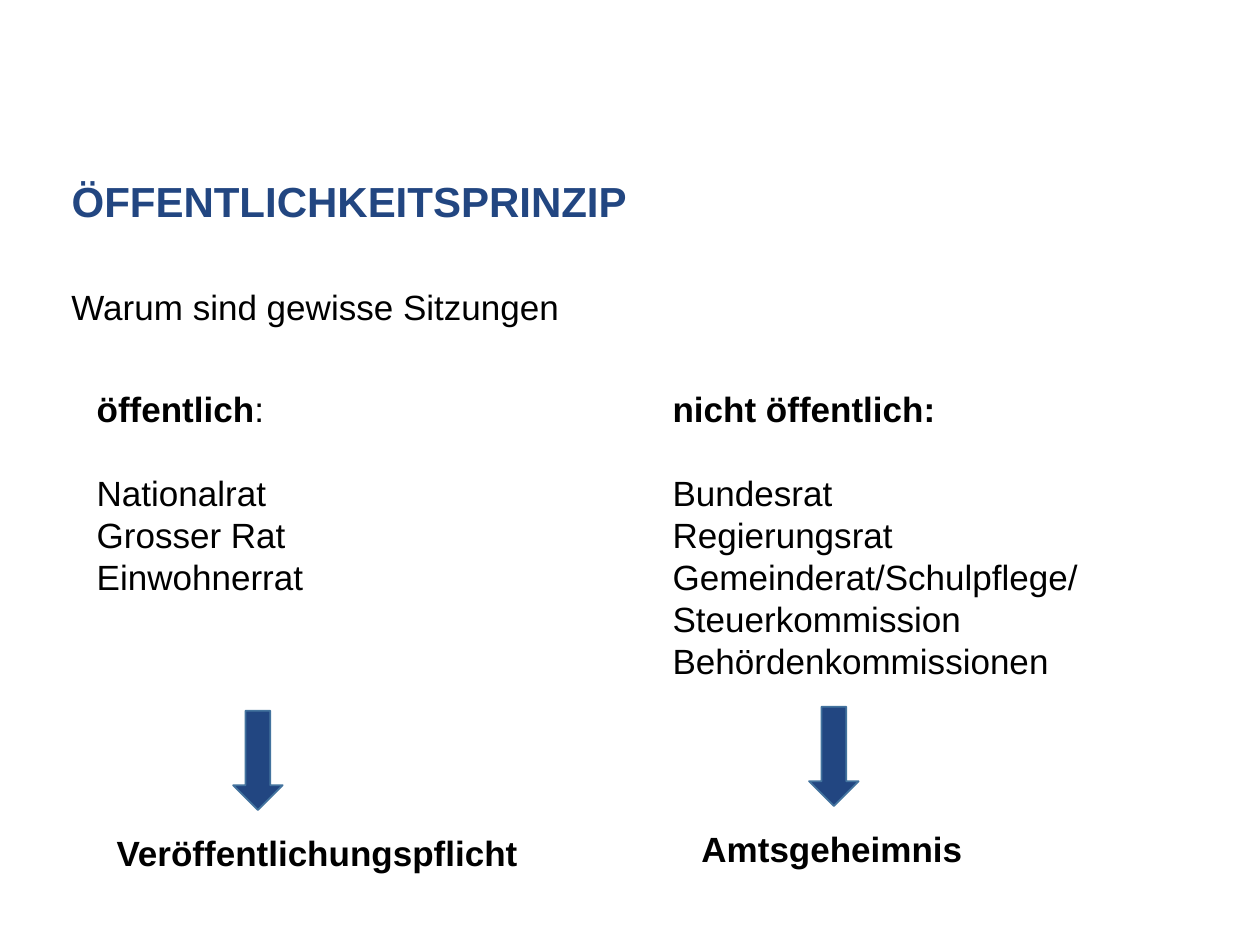
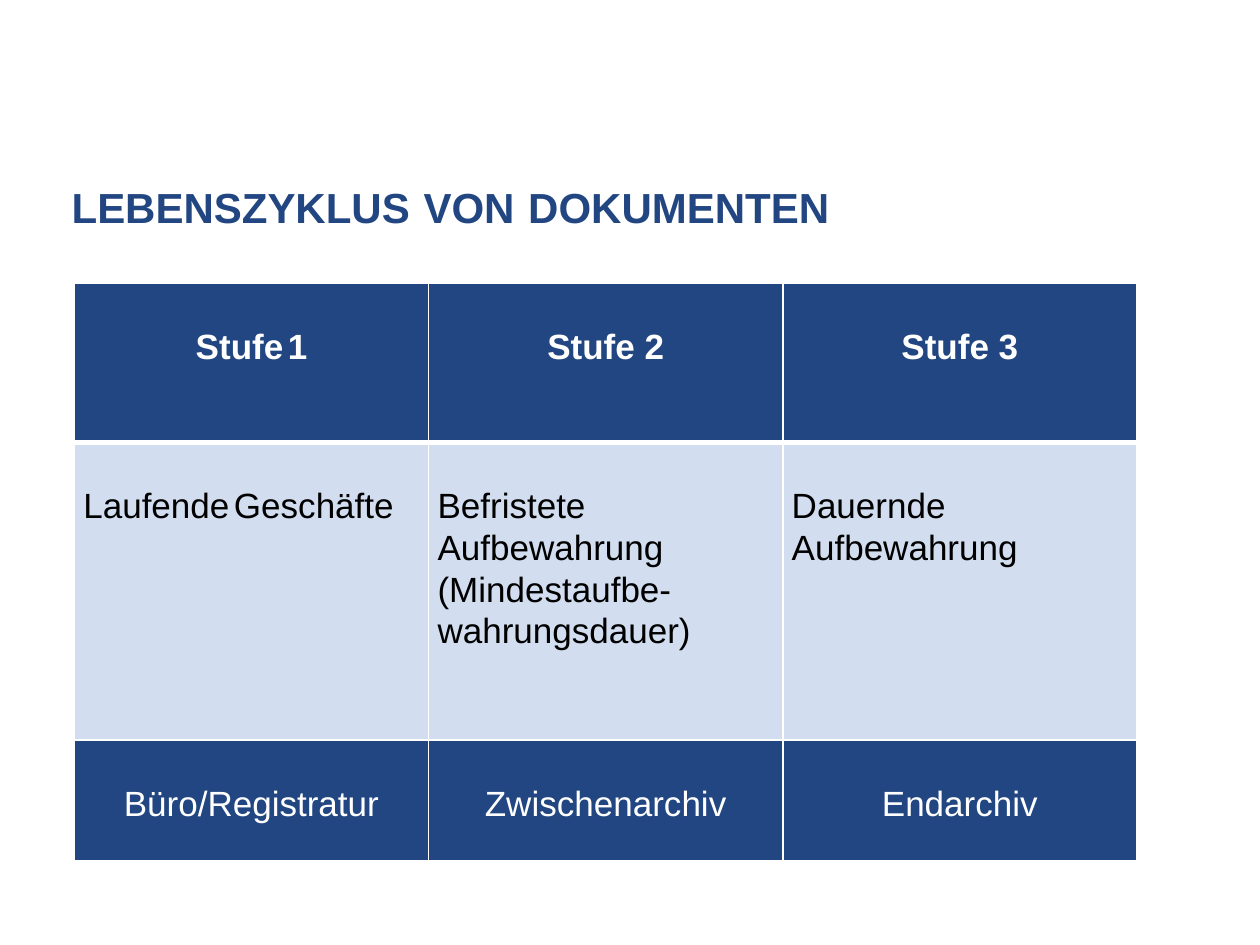
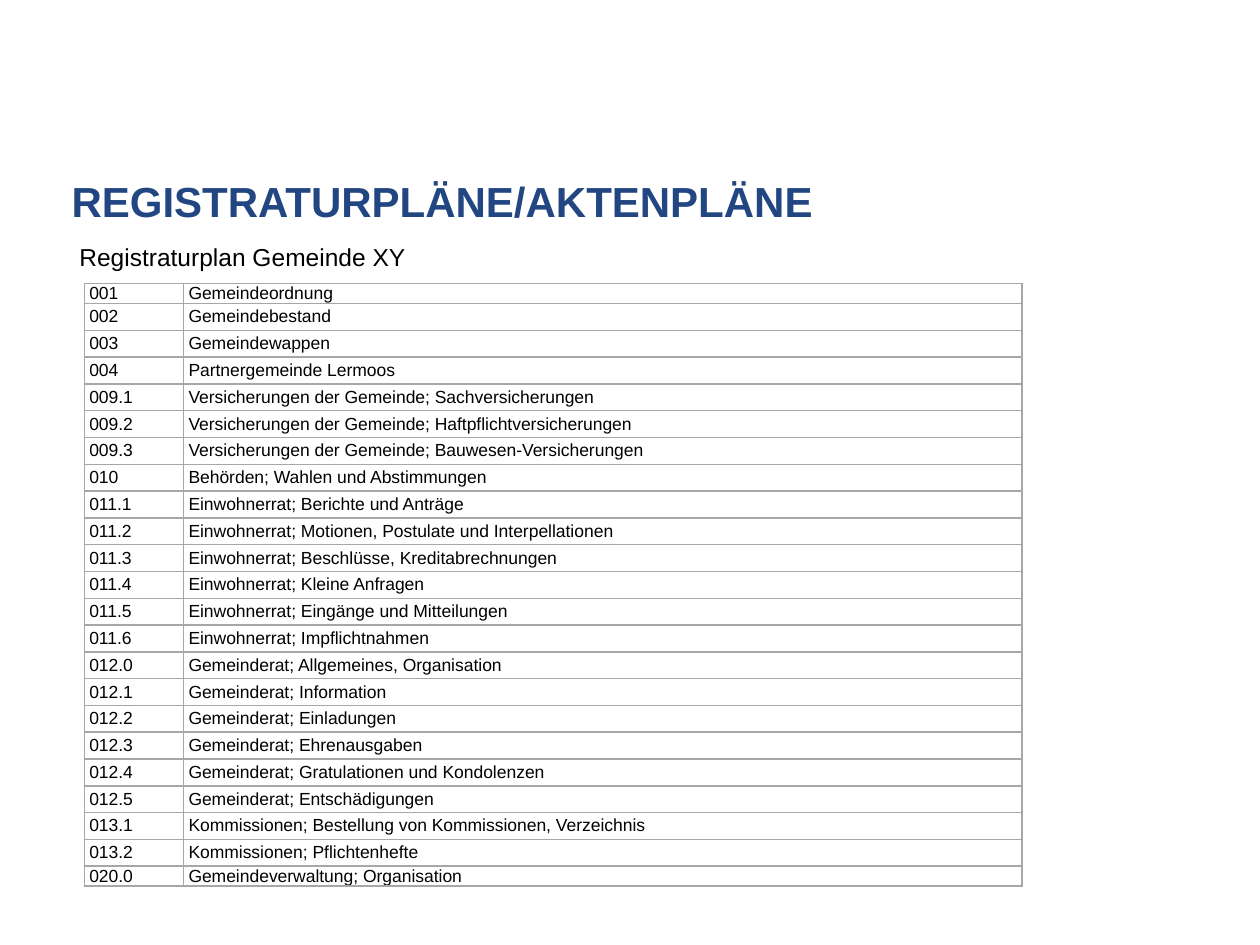
from lxml import etree
from pptx import Presentation
from pptx import util as u
from pptx.dml.color import RGBColor
from pptx.enum import shapes, text
from pptx.oxml import ns

Cm, Pt = u.Cm, u.Pt
BLUE = RGBColor(0x22, 0x46, 0x81)
PALE = RGBColor(0xD2, 0xDE, 0xEF)
EDGE = RGBColor(0x43, 0x73, 0x9E)
GREY = RGBColor(0xA7, 0xA7, 0xA7)
WHITE = RGBColor(0xFF, 0xFF, 0xFF)
BLACK = RGBColor(0, 0, 0)
FONT = "Arial"

PLAN = [
    ("001", "Gemeindeordnung"),
    ("002", "Gemeindebestand"),
    ("003", "Gemeindewappen"),
    ("004", "Partnergemeinde Lermoos"),
    ("009.1", "Versicherungen der Gemeinde; Sachversicherungen"),
    ("009.2", "Versicherungen der Gemeinde; Haftpflichtversicherungen"),
    ("009.3", "Versicherungen der Gemeinde; Bauwesen-Versicherungen"),
    ("010", "Behörden; Wahlen und Abstimmungen"),
    ("011.1", "Einwohnerrat; Berichte und Anträge"),
    ("011.2", "Einwohnerrat; Motionen, Postulate und Interpellationen"),
    ("011.3", "Einwohnerrat; Beschlüsse, Kreditabrechnungen"),
    ("011.4", "Einwohnerrat; Kleine Anfragen"),
    ("011.5", "Einwohnerrat; Eingänge und Mitteilungen"),
    ("011.6", "Einwohnerrat; Impflichtnahmen"),
    ("012.0", "Gemeinderat; Allgemeines, Organisation"),
    ("012.1", "Gemeinderat; Information"),
    ("012.2", "Gemeinderat; Einladungen"),
    ("012.3", "Gemeinderat; Ehrenausgaben"),
    ("012.4", "Gemeinderat; Gratulationen und Kondolenzen"),
    ("012.5", "Gemeinderat; Entschädigungen"),
    ("013.1", "Kommissionen; Bestellung von Kommissionen, Verzeichnis"),
    ("013.2", "Kommissionen; Pflichtenhefte"),
    ("020.0", "Gemeindeverwaltung; Organisation"),
]
STAGES = [
    ("Stufe 1", "Stufe 2", "Stufe 3"),
    ("Laufende Geschäfte",
     "Befristete Aufbewahrung (Mindestaufbe-wahrungsdauer)",
     "Dauernde Aufbewahrung"),
    ("Büro/Registratur", "Zwischenarchiv", "Endarchiv"),
]


def style(p, size, color=BLACK, bold=False):
    f = p.font
    f.name, f.size, f.bold = FONT, Pt(size), bold
    f.color.rgb = color


def add_words(p, words, gap_size, gap_font=FONT):
    """Write words as runs, with spaces of their own size and font."""
    for i, word in enumerate(words.split(" ")):
        if i:
            r = p.add_run()
            r.text = " "
            r.font.size, r.font.name = Pt(gap_size), gap_font
        p.add_run().text = word


def title_slide(prs, title, gap_size=24):
    s = prs.slides.add_slide(prs.slide_layouts[5])
    sp = s.shapes.title
    sp.left, sp.top, sp.width, sp.height = Cm(1.19), Cm(3.53), Cm(19.4), Cm(2.39)
    tf = sp.text_frame
    tf.auto_size = text.MSO_AUTO_SIZE.NONE
    tf.vertical_anchor = text.MSO_ANCHOR.TOP
    p = tf.paragraphs[0]
    p.alignment, p.line_spacing = text.PP_ALIGN.LEFT, 0.9
    style(p, 24, BLUE, True)
    add_words(p, title, gap_size)
    return s


def add_text(s, left, top, width, height, lines, bold=False, wrap=False):
    tf = s.shapes.add_textbox(left, top, width, height).text_frame
    tf.word_wrap = wrap
    for i, line in enumerate(lines):
        p = tf.add_paragraph() if i else tf.paragraphs[0]
        p.text = line
        style(p, 20, bold=bold)
    return tf


def meeting_column(s, left, width, heading, colon_bold, bodies,
                   arrow_top, duty, duty_indent, duty_width):
    """Heading and list of bodies, with an arrow down to the resulting duty."""
    tf = add_text(s, left, Cm(7.68), width, Cm(0.85) * (len(bodies) + 2),
                  [heading, *bodies])
    head, first = tf.paragraphs[:2]
    head.runs[0].font.bold = True
    r = head.add_run()
    r.text, r.font.bold = ":", colon_bold
    first.space_before = Pt(24)

    arrow = s.shapes.add_shape(shapes.MSO_SHAPE.DOWN_ARROW,
                               left + Cm(3), arrow_top, Cm(1), Cm(2))
    arrow.shadow.inherit = False
    arrow.fill.solid()
    arrow.fill.fore_color.rgb = BLUE
    arrow.line.color.rgb, arrow.line.width = EDGE, Pt(1)
    add_text(s, left + duty_indent, arrow_top + Cm(2.3), duty_width, Cm(1.11),
             [duty], bold=True)


def set_borders(cell, color, top=1, bottom=1):
    tc_pr = cell._tc.get_or_add_tcPr()
    for side, width in zip("LRTB", (1, 1, top, bottom)):
        ln = etree.SubElement(tc_pr, ns.qn("a:ln" + side), w=str(Pt(width)))
        fill = etree.SubElement(ln, ns.qn("a:solidFill"))
        etree.SubElement(fill, ns.qn("a:srgbClr"), val=str(color))


def add_table(s, left, top, widths, heights):
    table = s.shapes.add_table(len(heights), len(widths), left, top,
                               sum(widths), sum(heights)).table
    table.first_row = table.horz_banding = False
    for col, width in zip(table.columns, widths):
        col.width = width
    for row, height in zip(table.rows, heights):
        row.height = height
    return table


def fill_cell(cell, size, color=BLACK, back=None, side=0.1, top=0, bold=False):
    """Set margins, background and font; return the cell's paragraph."""
    cell.margin_left = cell.margin_right = Cm(side)
    cell.margin_top, cell.margin_bottom = Cm(top), 0
    if back is None:
        cell.fill.background()
    else:
        cell.fill.solid()
        cell.fill.fore_color.rgb = back
    p = cell.text_frame.paragraphs[0]
    style(p, size, color, bold)
    return p


def stage_table(s, left, top):
    table = add_table(s, left, top, [Cm(7.14)] * 3, [Cm(3.2), Cm(6), Cm(2.43)])
    for i, stage_row in enumerate(STAGES):
        middle = i == 1
        for j, label in enumerate(stage_row):
            cell = table.cell(i, j)
            set_borders(cell, WHITE, top=3 if i == 1 else 1, bottom=3 if i == 0 else 1)
            p = fill_cell(cell, 20, BLACK if middle else WHITE,
                          PALE if middle else BLUE, 0.18, 0.84, bold=i == 0)
            p.line_spacing = 1.07
            p.alignment = text.PP_ALIGN.LEFT if middle else text.PP_ALIGN.CENTER
            if j == 0:
                add_words(p, label, 11, "Calibri")
            else:
                p.add_run().text = label


def plan_table(s, left, top):
    heights = [Cm(0.4), *[Cm(0.54)] * (len(PLAN) - 2), Cm(0.4)]
    table = add_table(s, left, top, [Cm(2), Cm(16.9)], heights)
    for i, entry in enumerate(PLAN):
        for j, label in enumerate(entry):
            cell = table.cell(i, j)
            set_borders(cell, GREY)
            cell.vertical_anchor = text.MSO_ANCHOR.MIDDLE
            fill_cell(cell, 10).add_run().text = label


def main():
    prs = Presentation()
    prs.slide_width, prs.slide_height = Cm(25.4), Cm(19.05)

    s = title_slide(prs, "ÖFFENTLICHKEITSPRINZIP")
    tf = add_text(s, Cm(1.19), Cm(5.72), Cm(19.4), Cm(1.2),
                  ["Warum sind gewisse Sitzungen"], wrap=True)
    tf.paragraphs[0].line_spacing = 0.9
    meeting_column(s, Cm(1.7), Cm(4.72), "öffentlich", False,
                   ["Nationalrat", "Grosser Rat", "Einwohnerrat"],
                   Cm(14.33), "Veröffentlichungspflicht", Cm(0.4), Cm(8.66))
    meeting_column(s, Cm(13.31), Cm(8.74), "nicht öffentlich", True,
                   ["Bundesrat", "Regierungsrat", "Gemeinderat/Schulpflege/",
                    "Steuerkommission", "Behördenkommissionen"],
                   Cm(14.25), "Amtsgeheimnis", Cm(0.58), Cm(5.82))

    s = title_slide(prs, "LEBENSZYKLUS VON DOKUMENTEN", gap_size=28)
    stage_table(s, Cm(1.5), Cm(5.72))

    s = title_slide(prs, "REGISTRATURPLÄNE/AKTENPLÄNE")
    caption = add_table(s, Cm(1.5), Cm(4.93), [Cm(17.15)], [Cm(0.58)])
    fill_cell(caption.cell(0, 0), 14).add_run().text = "Registraturplan Gemeinde XY"
    plan_table(s, Cm(1.7), Cm(5.72))

    prs.save("out.pptx")


if __name__ == "__main__":
    main()
